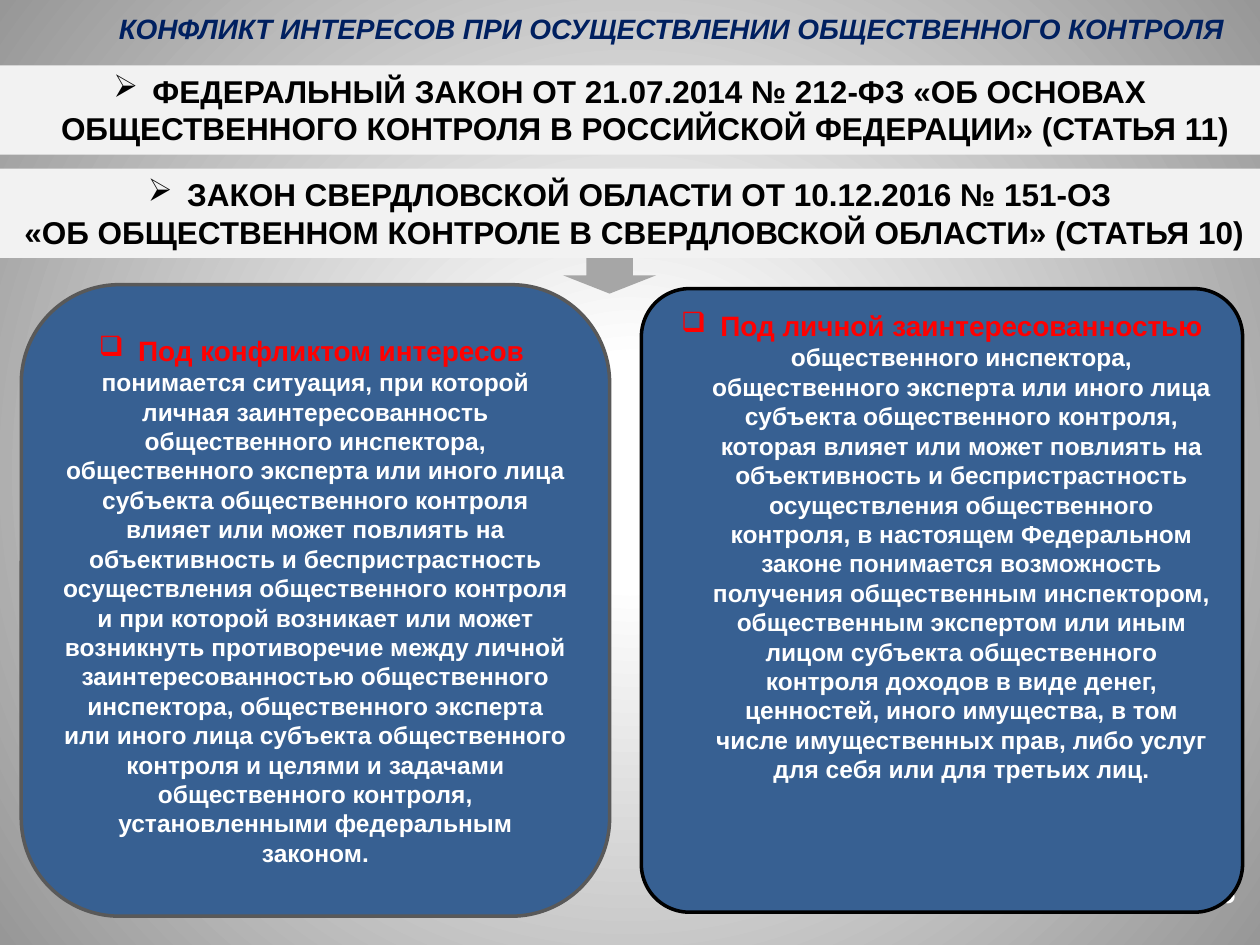
from pptx import Presentation
from pptx.dml.color import RGBColor
from pptx.enum.shapes import MSO_SHAPE
from pptx.enum.text import MSO_ANCHOR, MSO_AUTO_SIZE, PP_ALIGN
from pptx.oxml import parse_xml
from pptx.oxml.ns import nsdecls, qn
from pptx.util import Cm, Pt

TITLE = "КОНФЛИКТ ИНТЕРЕСОВ ПРИ ОСУЩЕСТВЛЕНИИ ОБЩЕСТВЕННОГО КОНТРОЛЯ"

TITLE_FONT = dict(size=16, color="002060", italic=True)
LAW_FONT = dict(size=18, color="000000")
TERM_FONT = dict(size=16, color="FF0000")
BODY_FONT = dict(size=14, color="FFFFFF")
NUMBER_FONT = dict(size=16, color="FFFFFF", name="Karla")

# A paragraph is (bullet or None, [(text, font), ...])
FEDERAL_LAW = [
    ("➢", [("ФЕДЕРАЛЬНЫЙ ЗАКОН ОТ 21.07.2014 № 212-ФЗ «ОБ ОСНОВАХ ОБЩЕСТВЕННОГО "
            "КОНТРОЛЯ В РОССИЙСКОЙ ФЕДЕРАЦИИ» (СТАТЬЯ 11) ", LAW_FONT)]),
]
REGIONAL_LAW = [
    ("➢", [("ЗАКОН СВЕРДЛОВСКОЙ ОБЛАСТИ ОТ 10.12.2016 № 151-ОЗ", LAW_FONT)]),
    (None, [(" «ОБ ОБЩЕСТВЕННОМ КОНТРОЛЕ В СВЕРДЛОВСКОЙ ОБЛАСТИ» (СТАТЬЯ 10)", LAW_FONT)]),
]
CONFLICT = [
    ("❑", [("Под конфликтом интересов ", TERM_FONT)]),
    (None, [("понимается ситуация, при которой личная заинтересованность общественного "
             "инспектора, общественного эксперта или иного лица субъекта общественного "
             "контроля влияет или может повлиять на объективность и беспристрастность "
             "осуществления общественного контроля и при которой возникает или может "
             "возникнуть противоречие между личной заинтересованностью общественного "
             "инспектора, общественного эксперта или иного лица субъекта общественного "
             "контроля и целями и задачами общественного контроля, установленными "
             "федеральным законом.", BODY_FONT)]),
]
INTEREST = [
    ("❑", [("Под личной заинтересованностью ", TERM_FONT),
           ("общественного инспектора, общественного эксперта или иного лица субъекта "
            "общественного контроля, которая влияет или может повлиять на объективность и "
            "беспристрастность осуществления общественного контроля, в настоящем Федеральном "
            "законе понимается возможность получения общественным инспектором, общественным "
            "экспертом или иным лицом субъекта общественного контроля доходов в виде денег, "
            "ценностей, иного имущества, в том числе имущественных прав, либо услуг для себя "
            "или для третьих лиц.", BODY_FONT)]),
]

SLIDE_W, SLIDE_H = 25.4, 19.05
BAND_H = 1.8
BAND_TOPS = (1.32, 3.4)


def rgb(color):
    return RGBColor.from_string(color)


def add_bullet(p, char):
    """Give the paragraph a bullet with a hanging indent."""
    pPr = p._p.get_or_add_pPr()
    pPr.set("marL", str(Cm(0.79)))
    pPr.set("indent", str(-Cm(0.79)))
    pPr.append(parse_xml(f'<a:buChar {nsdecls("a")} char="{char}"/>'))


def write(sp, paragraphs, anchor=MSO_ANCHOR.TOP, auto_size=MSO_AUTO_SIZE.NONE):
    tf = sp.text_frame
    for key, value in dict(word_wrap=True, vertical_anchor=anchor, auto_size=auto_size).items():
        setattr(tf, key, value)
    for i, (bullet, runs) in enumerate(paragraphs):
        p = tf.add_paragraph() if i else tf.paragraphs[0]
        p.alignment = PP_ALIGN.CENTER
        if bullet:
            add_bullet(p, bullet)
        for text, font in runs:
            r = p.add_run()
            r.text = text
            values = dict(name="Arial", bold=True, italic=False) | font
            r.font.color.rgb = rgb(values.pop("color"))
            r.font.size = Pt(values.pop("size"))
            for key, value in values.items():
                setattr(r.font, key, value)


def add_shape(s, kind, box, fill, line=None, adj=()):
    sp = s.shapes.add_shape(kind, *map(Cm, box))
    sp.shadow.inherit = False
    sp.fill.solid()
    sp.fill.fore_color.rgb = rgb(fill)
    if line:
        sp.line.color.rgb = rgb(line)
        sp.line.width = Pt(2)
    else:
        sp.line.fill.background()
    for i, value in enumerate(adj):
        sp.adjustments[i] = value
    return sp


def add_band(s, top, paragraphs):
    sp = add_shape(s, MSO_SHAPE.RECTANGLE, (0, top, SLIDE_W, BAND_H), "F2F2F2")
    write(sp, paragraphs, auto_size=MSO_AUTO_SIZE.SHAPE_TO_FIT_TEXT)


def set_background(s):
    """Radial gradient, white in the centre and grey at the edges."""
    fill = s.background.fill
    fill.gradient()
    for stop, (position, color) in zip(fill.gradient_stops, ((0.14, "FFFFFF"), (1, "979797"))):
        stop.position = position
        stop.color.rgb = rgb(color)
    grad = s._element.find(".//" + qn("a:gradFill"))
    grad.replace(grad.find(qn("a:lin")), parse_xml(
        f'<a:path {nsdecls("a")} path="circle">'
        '<a:fillToRect l="50000" t="50000" r="50000" b="50000"/></a:path>'))


def main():
    prs = Presentation()
    prs.slide_width, prs.slide_height = Cm(SLIDE_W), Cm(SLIDE_H)
    s = prs.slides.add_slide(prs.slide_layouts[5])
    set_background(s)

    title = s.shapes.title
    title.left, title.top, title.width, title.height = map(Cm, (1.14, 0.1, 24.8, 0.94))
    write(title, [(None, [(TITLE, TITLE_FONT)])])

    number = s.shapes.add_textbox(*map(Cm, (24.1, 17.53, 1.3, 0.94)))
    write(number, [(None, [("5", NUMBER_FONT)])])

    add_band(s, BAND_TOPS[0], FEDERAL_LAW)
    conflict = add_shape(s, MSO_SHAPE.ROUNDED_RECTANGLE, (0.43, 5.74, 11.86, 12.73),
                         "376092", "595959")
    write(conflict, CONFLICT, MSO_ANCHOR.MIDDLE)
    add_shape(s, MSO_SHAPE.DOWN_ARROW, (11.35, 5.18, 1.88, 0.74), "A6A6A6")
    interest = add_shape(s, MSO_SHAPE.ROUNDED_RECTANGLE, (12.93, 5.82, 12.12, 12.57),
                         "376092", "000000", [0.08])
    write(interest, INTEREST)
    add_band(s, BAND_TOPS[1], REGIONAL_LAW)

    prs.save("out.pptx")


if __name__ == "__main__":
    main()
